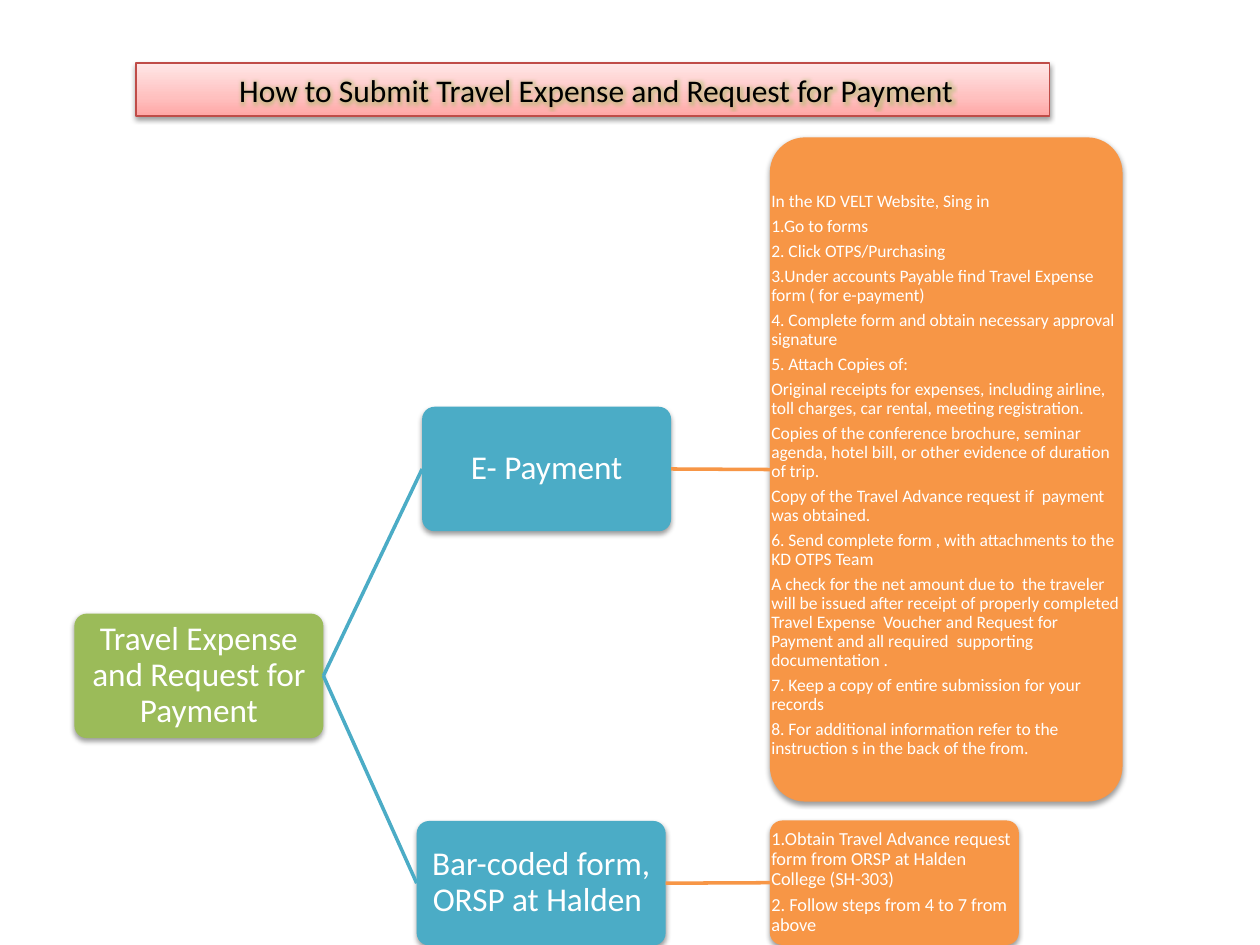
from copy import deepcopy

from lxml import etree
from pptx import Presentation
from pptx.dml.color import RGBColor
from pptx.enum import shapes, text
from pptx.oxml import ns
from pptx.util import Cm, Pt

WHITE = RGBColor(0xFF, 0xFF, 0xFF)
BLACK = RGBColor(0, 0, 0)
GREEN = RGBColor(0x9B, 0xBB, 0x59)
TEAL = RGBColor(0x4B, 0xAC, 0xC6)
ORANGE = RGBColor(0xF7, 0x96, 0x46)
RED = RGBColor(0xBF, 0x4C, 0x48)
PINKS = [(0, RGBColor(0xFF, 0xA6, 0xA5)), (0.35, RGBColor(0xFF, 0xC0, 0xBF)),
         (1, RGBColor(0xFF, 0xE7, 0xE7))]
FONT = "Calibri"
WIDE, HIGH = 5.02, 2.51  # size of a normal card, in cm
LEFT, RIGHT = 1, 3  # connection sites of a rounded rectangle

STEPS = [
    "In the KD VELT Website, Sing in",
    "1.Go to forms",
    "2. Click OTPS/Purchasing",
    "3.Under accounts Payable find Travel Expense form ( for e-payment)",
    "4. Complete form and obtain necessary approval signature",
    "5. Attach Copies of:",
    "Original receipts for expenses, including airline, toll charges, "
    "car rental, meeting registration.",
    "Copies of the conference brochure, seminar agenda, hotel bill, "
    "or other evidence of duration of trip.",
    "Copy of the Travel Advance request if  payment was obtained.",
    "6. Send complete form , with attachments to the KD OTPS Team",
    "A check for the net amount due to  the traveler will be issued after "
    "receipt of properly completed Travel Expense  Voucher and Request for "
    "Payment and all required  supporting documentation .",
    "7. Keep a copy of entire submission for your records",
    "8. For additional information refer to the instruction s "
    "in the back of the from.",
]
PAPER = [
    "1.Obtain Travel Advance request form from ORSP at Halden College (SH-303)",
    "2. Follow steps from 4 to 7 from above",
]


def add(parent, tag, **attrs):
    node = etree.SubElement(parent, ns.qn(tag))
    for key, val in attrs.items():
        node.set(key, str(val))
    return node


def tint(parent, color, alpha):
    add(add(parent, "a:srgbClr", val=color), "a:alpha", val=alpha * 1000)


def shade(shape):
    """Give the shape a soft shadow below it."""
    shape.shadow.inherit = False
    effects = shape.element.spPr.find(ns.qn("a:effectLst"))
    drop = add(effects, "a:outerShdw", blurRad=Pt(3.1), dist=Pt(1.6),
               dir=5400000, rotWithShape=0)
    tint(drop, BLACK, 38)


def banner(slide, x, y, w, h):
    title = slide.shapes.title
    title.left, title.top, title.width, title.height = map(Cm, (x, y, w, h))
    fill = title.fill
    fill.gradient()
    fill.gradient_angle = 90
    first = fill.gradient_stops[0]._gs
    first.addnext(deepcopy(first))
    for stop, (place, color) in zip(fill.gradient_stops, PINKS):
        stop.position = place
        stop.color.rgb = color
    title.line.color.rgb = RED
    title.line.width = Pt(0.75)
    shade(title)

    frame = title.text_frame
    frame.text = " How to Submit Travel Expense and Request for Payment"
    frame.auto_size = text.MSO_AUTO_SIZE.NONE
    frame.vertical_anchor = text.MSO_ANCHOR.MIDDLE
    para = frame.paragraphs[0]
    para.alignment = text.PP_ALIGN.CENTER
    font = para.font
    font.name, font.size, font.color.rgb = FONT, Pt(18), BLACK
    effects = add(para.runs[0]._r.get_or_add_rPr(), "a:effectLst")
    tint(add(effects, "a:glow", rad=Pt(5)), GREEN, 40)


def card(slide, x, y, w, h, color, lines, size, align, top=None):
    """Draw a rounded card; its text is centred unless a top gap is given."""
    box = tuple(map(Cm, (x, y, w, h)))
    shape = slide.shapes.add_shape(shapes.MSO_SHAPE.ROUNDED_RECTANGLE, *box)
    shape.adjustments[0] = 0.1
    shape.fill.solid()
    shape.fill.fore_color.rgb = color
    shape.line.fill.background()
    shade(shape)

    frame = slide.shapes.add_textbox(*box).text_frame
    frame.word_wrap = True
    frame.margin_left = frame.margin_right = Cm(0.03)
    frame.margin_top = Cm(top or 0.03)
    frame.margin_bottom = Cm(0.03)
    frame.vertical_anchor = (text.MSO_ANCHOR.TOP if top
                             else text.MSO_ANCHOR.MIDDLE)
    frame.text = "\n".join(lines)
    for para in frame.paragraphs:
        para.alignment = align
        para.line_spacing = 0.9
        para.space_after = Pt(round(size * 0.35, 1))
        font = para.font
        font.name, font.size, font.color.rgb = FONT, Pt(size), WHITE
    return shape


def link(slide, start, end, color):
    line = slide.shapes.add_connector(shapes.MSO_CONNECTOR.STRAIGHT, 0, 0, 0, 0)
    line.begin_connect(start, RIGHT)
    line.end_connect(end, LEFT)
    line.line.color.rgb = color
    line.line.width = Pt(2)
    add(line.element.spPr, "a:effectLst")


def tree(slide, x, y):
    """Place the tree of payment ways, with its top left corner at x, y."""
    mid, left = text.PP_ALIGN.CENTER, text.PP_ALIGN.LEFT
    last = x + 14.02
    root = card(slide, x, y + 9.6, WIDE, HIGH, GREEN,
                ["Travel Expense and Request for Payment"], 19, mid)
    web = card(slide, x + 7.01, y + 5.43, WIDE, HIGH, TEAL,
               ["E- Payment"], 19, mid)
    form = card(slide, x + 6.9, y + 13.78, WIDE, HIGH, TEAL,
                ["Bar-coded form, ORSP at Halden "], 19, mid)
    steps = card(slide, last, y, 7.11, 13.39, ORANGE, STEPS, 10, left, 1.11)
    paper = card(slide, last, y + 13.77, WIDE, HIGH, ORANGE, PAPER, 10.5, left)
    for start, end, color in ((root, web, TEAL), (root, form, TEAL),
                              (web, steps, ORANGE), (form, paper, ORANGE)):
        link(slide, start, end, color)


def main():
    deck = Presentation()
    deck.slide_width, deck.slide_height = Cm(25.4), Cm(19.05)
    slide = deck.slides.add_slide(deck.slide_layouts[5])
    banner(slide, 2.74, 1.27, 18.42, 1.07)
    tree(slide, 1.5, 2.77)
    deck.save("out.pptx")


if __name__ == "__main__":
    main()
